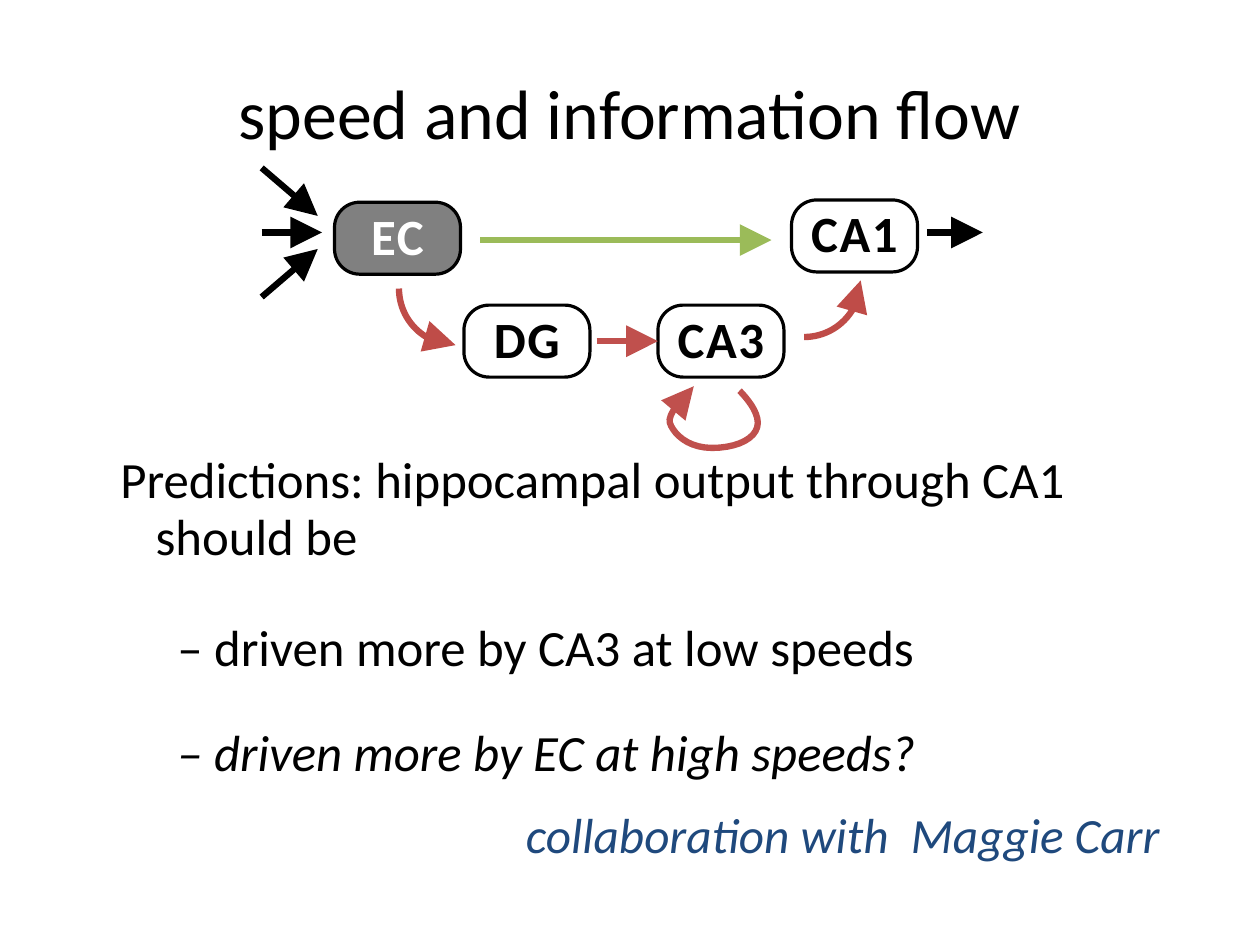
import pptx
import pptx.util
import pptx.dml.color
import pptx.enum.shapes
import pptx.enum.text
import pptx.oxml.ns

Pt = pptx.util.Pt
SHAPE = pptx.enum.shapes.MSO_SHAPE
ALIGN = pptx.enum.text.PP_ALIGN
ANCHOR = pptx.enum.text.MSO_ANCHOR

WIDE = pptx.util.Cm(28)
HIGH = pptx.util.Cm(21)
BLACK, WHITE, GRAY = "000000", "FFFFFF", "808080"
RED, GREEN, BLUE, BRICK = "C0504D", "9BBB59", "1F497D", "BF4C48"
NODE_W, NODE_H = 10, 7.62
ARC_W, ARC_H = 8.98, 11.97
FLOW_Y = 24.6


def across(share):
    """Percent of the slide width."""
    return round(WIDE * share / 100)


def down(share):
    """Percent of the slide height."""
    return round(HIGH * share / 100)


def area(left, top, width, height):
    return across(left), down(top), across(width), down(height)


def paint(target, color):
    target.rgb = pptx.dml.color.RGBColor.from_string(color)


def add_tag(parent, name, **attrs):
    parent.append(parent.makeelement(pptx.oxml.ns.qn("a:" + name), attrs))


def style(par, size, color=BLACK, align=ALIGN.LEFT, space=0.93,
          bold=False, slant=False):
    par.alignment = align
    par.line_spacing = space
    font = par.font
    font.name, font.size = "Calibri", Pt(size)
    font.bold, font.italic = bold, slant
    paint(font.color, color)


def clear(frame, anchor):
    frame.word_wrap = True
    frame.vertical_anchor = anchor
    frame.margin_left = frame.margin_right = 0
    frame.margin_top = frame.margin_bottom = 0


def stroke(item, color, width=4, end=None):
    """Outline; end is headEnd or tailEnd for an arrowhead."""
    paint(item.line.color, color)
    item.line.width = Pt(width)
    if end:
        add_tag(item.line._get_or_add_ln(), end,
                type="triangle", w="lg", len="lg")


def node(slide, name, left, top, fill=WHITE, color=BLACK):
    box = slide.shapes.add_shape(SHAPE.ROUNDED_RECTANGLE,
                                 *area(left, top, NODE_W, NODE_H))
    box.adjustments[0] = 0.35
    box.shadow.inherit = False
    box.fill.solid()
    paint(box.fill.fore_color, fill)
    stroke(box, BLACK, 2)
    clear(box.text_frame, ANCHOR.MIDDLE)
    par = box.text_frame.paragraphs[0]
    run = par.add_run()
    run.text = name
    run._r.get_or_add_rPr().set("spc", "100")
    style(par, 32, color, ALIGN.CENTER, bold=True)
    return box


def arrow(slide, x1, y1, x2, y2, color=BLACK):
    line = slide.shapes.add_connector(
        pptx.enum.shapes.MSO_CONNECTOR.STRAIGHT,
        across(x1), down(y1), across(x2), down(y2))
    stroke(line, color, end="tailEnd")
    add_tag(line._element.spPr, "effectLst")
    return line


def bend(shape, color, end):
    """Open curved arrow."""
    shape.shadow.inherit = False
    shape.fill.background()
    stroke(shape, color, end=end)


def arc(slide, left, top, turn):
    bow = slide.shapes.add_shape(SHAPE.ARC, *area(left, top, ARC_W, ARC_H))
    bow.rotation = turn
    bend(bow, BRICK, "headEnd")


def curve(knots, steps=10):
    """Points along joined cubic curves; every third knot is on the line."""
    for i in range(0, len(knots) - 1, 3):
        for n in range(1, steps + 1):
            t = n / steps
            parts = ((1 - t) ** 3, 3 * t * (1 - t) ** 2,
                     3 * t ** 2 * (1 - t), t ** 3)
            x, y = (sum(part * knot[k]
                        for part, knot in zip(parts, knots[i:i + 4]))
                    for k in (0, 1))
            yield across(x), down(y)


def loop(slide, knots):
    x, y = knots[0]
    pen = slide.shapes.build_freeform(across(x), down(y))
    pen.add_line_segments(list(curve(knots)), close=False)
    bend(pen.convert_to_shape(), RED, "tailEnd")


def head(slide, text):
    title = slide.shapes.title
    title.left, title.top, title.width, title.height = area(5, 3.9, 90, 16.7)
    clear(title.text_frame, ANCHOR.MIDDLE)
    title.text_frame.text = text
    style(title.text_frame.paragraphs[0], 44, align=ALIGN.CENTER)


def indent(par, left, first):
    props = par._p.get_or_add_pPr()
    props.set("marL", str(across(left)))
    props.set("indent", str(across(first)))


def claims(slide, lead, points):
    box = slide.shapes.add_textbox(*area(5, 48, 90, 38))
    frame = box.text_frame
    clear(frame, ANCHOR.TOP)
    par = frame.paragraphs[0]
    par.text = lead
    style(par, 32)
    par.space_after = Pt(11.4)
    indent(par, 7.35, -2.8)
    for text, slant in points:
        par = frame.add_paragraph()
        par.text = text
        style(par, 32, space=1.5, slant=slant)
        par.space_after = Pt(8.5)
        indent(par, 11.35, -2.27)


def credit(slide, text):
    box = slide.shapes.add_textbox(*area(30.2, 85.1, 62.7, 7.1))
    box.text_frame.word_wrap = True
    par = box.text_frame.paragraphs[0]
    par.text = text
    style(par, 31, BLUE, ALIGN.RIGHT, slant=True)


def main():
    deck = pptx.Presentation()
    deck.slide_width = WIDE
    deck.slide_height = HIGH
    slide = deck.slides.add_slide(deck.slide_layouts[5])
    head(slide, "speed and information flow")

    # Text below the diagram
    claims(slide, "Predictions: hippocampal output through CA1 should be",
           [("– driven more by CA3 at low speeds", False),
            ("– driven more by EC at high speeds?", True)])
    credit(slide, "collaboration with  Maggie Carr")

    # Brain regions
    low = 32.29
    node(slide, "EC", 26.55, 21.4, GRAY, WHITE)
    node(slide, "DG", 36.82, low)
    ca3 = node(slide, "CA3", 52.22, low)
    node(slide, "CA1", 62.82, 21.16)

    # Inputs, direct path and output
    for side in (-1, 1):
        arrow(slide, 20.77, FLOW_Y + side * 6.83, 25.22, FLOW_Y + side * 1.75)
    arrow(slide, 20.77, FLOW_Y, 25.56, FLOW_Y)
    arrow(slide, 38.1, 25.4, 61.23, 25.4, GREEN)
    arrow(slide, 73.57, FLOW_Y, 78, FLOW_Y)

    # Path through DG and CA3
    mid = low + NODE_H / 2
    arrow(slide, 47.35, mid, 52.22, mid, RED).end_connect(ca3, 1)
    arc(slide, 31.66, 24.55, 180)
    arc(slide, 59.33, 23.7, 90)
    loop(slide, [(58.69, 41.35), (58.69, 41.35), (60.14, 43.17),
                 (60.14, 44.74), (60.14, 46.31), (58.6, 47.4),
                 (56.51, 47.4), (54.52, 47.4), (53.43, 45.83),
                 (53.16, 44.74), (52.88, 43.65), (55.06, 40.87),
                 (55.06, 40.87)])

    deck.save("out.pptx")


if __name__ == "__main__":
    main()
